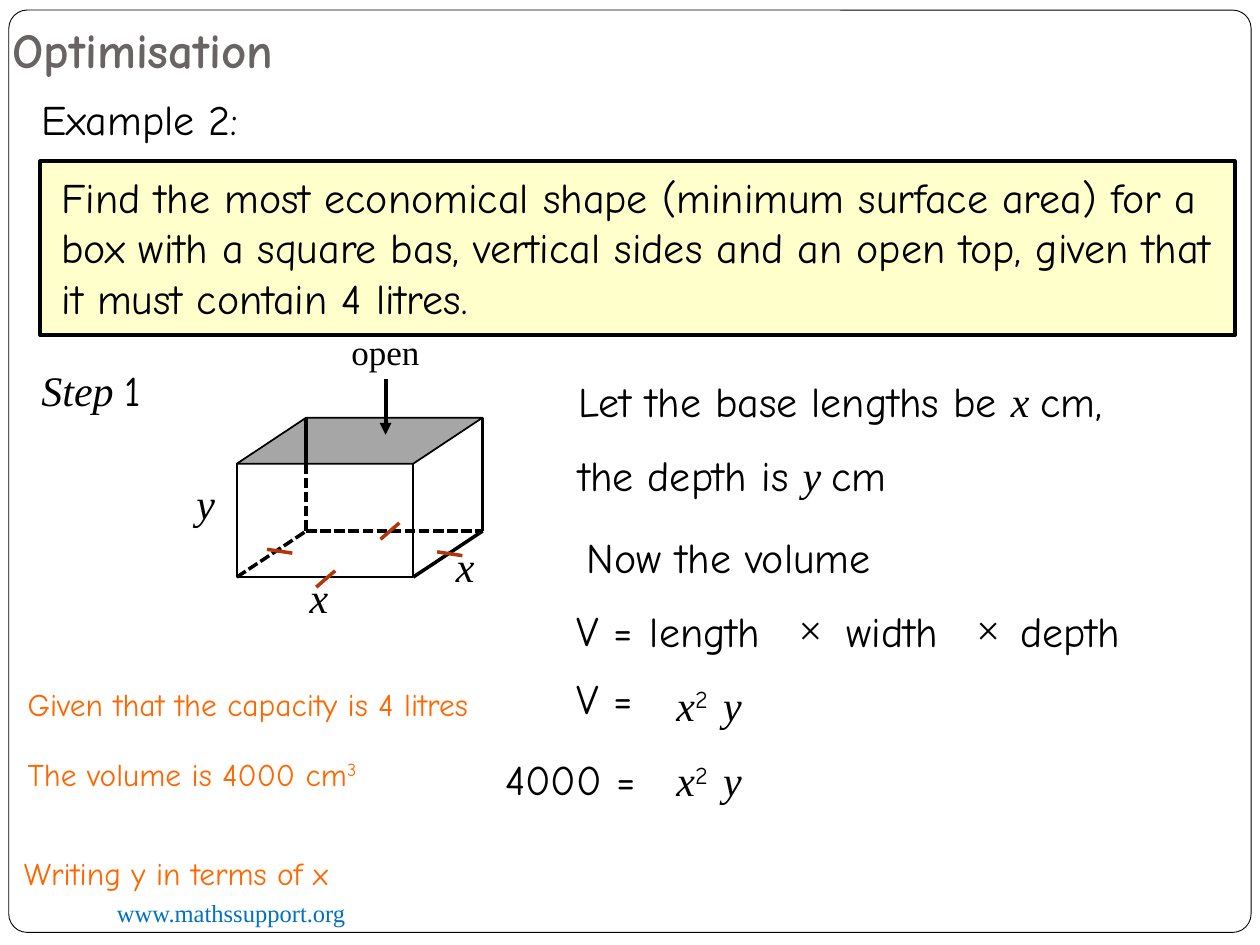
from dataclasses import dataclass

from lxml import etree
from pptx import Presentation
from pptx.dml.color import RGBColor
from pptx.enum.dml import MSO_LINE
from pptx.enum.shapes import MSO_CONNECTOR, MSO_SHAPE
from pptx.enum.text import MSO_ANCHOR, MSO_AUTO_SIZE, PP_ALIGN
from pptx.oxml.ns import qn
from pptx.util import Inches, Pt

STRAIGHT = MSO_CONNECTOR.STRAIGHT
DASHED = MSO_LINE.SQUARE_DOT
RECTANGLE = MSO_SHAPE.RECTANGLE
ROUNDED = MSO_SHAPE.ROUNDED_RECTANGLE
PARALLELOGRAM = MSO_SHAPE.PARALLELOGRAM
FIT_SHAPE = MSO_AUTO_SIZE.SHAPE_TO_FIT_TEXT
NO_FIT = MSO_AUTO_SIZE.NONE
BOTTOM = MSO_ANCHOR.BOTTOM
LEFT = PP_ALIGN.LEFT
TITLE_ONLY = 5
COLUMNS, ROWS = 100, 75


@dataclass(frozen=True)
class Theme:
    hand: str = "Comic Neue"
    serif: str = "Times New Roman"
    ink: str = "000000"
    title: str = "696464"
    panel: str = "FFFFCC"
    lid: str = "A6A6A6"
    tick: str = "B1360B"
    remark: str = "FF6600"
    link: str = "0070C0"
    title_size: int = 28
    body_size: int = 24
    label_size: int = 20
    remark_size: int = 18
    footer_size: int = 14


THEME = Theme()


def math(text):
    return text, "math"


def power(text):
    return text, "power"


class SlideBuilder:
    """Places elements on a grid of 100 columns by 75 rows."""

    def __init__(self, deck, theme):
        self.theme = theme
        self.column = deck.slide_width / COLUMNS
        self.row = deck.slide_height / ROWS
        self.slide = deck.slides.add_slide(deck.slide_layouts[TITLE_ONLY])
        self.shapes = self.slide.shapes

    def place(self, x, y):
        return round(x * self.column), round(y * self.row)

    def add_runs(self, frame, parts, size, color, font=None):
        """Fill one paragraph; a part is plain text or (text, role)."""
        paragraph = frame.paragraphs[0]
        paragraph.alignment = LEFT
        for part in [parts] if isinstance(parts, str) else parts:
            text, role = (part, "plain") if isinstance(part, str) else part
            run = paragraph.add_run()
            run.text = text
            run.font.size = Pt(size)
            run.font.color.rgb = RGBColor.from_string(color)
            run.font.italic = role == "math"
            run.font.name = self.theme.serif if role == "math" else font or self.theme.hand
            if role == "power":
                run._r.get_or_add_rPr().set("baseline", "30000")

    def title(self, text, x, y, width, height):
        holder = self.shapes.title
        holder.left, holder.top = self.place(x, y)
        holder.width, holder.height = self.place(width, height)
        frame = holder.text_frame
        frame.auto_size = NO_FIT
        frame.vertical_anchor = BOTTOM
        frame.margin_bottom = Inches(0.1)
        self.add_runs(frame, text, self.theme.title_size, self.theme.title)
        frame.paragraphs[0].runs[0].font.bold = True

    def text(self, parts, x, y, width, height=5, size=None, color=None, font=None, wrap=True):
        box = self.shapes.add_textbox(*self.place(x, y), *self.place(width, height))
        frame = box.text_frame
        frame.word_wrap = wrap
        frame.auto_size = FIT_SHAPE
        self.add_runs(frame, parts, size or self.theme.body_size, color or self.theme.ink, font)
        return box

    def remark(self, parts, x, y):
        self.text(parts, x, y, 44.8, 4, self.theme.remark_size, self.theme.remark)

    def shape(self, kind, x, y, width, height, fill=None, weight=1, adjust=None):
        shape = self.shapes.add_shape(kind, *self.place(x, y), *self.place(width, height))
        shape.shadow.inherit = False
        if fill:
            shape.fill.solid()
            shape.fill.fore_color.rgb = RGBColor.from_string(fill)
        else:
            shape.fill.background()
        shape.line.color.rgb = RGBColor.from_string(self.theme.ink)
        shape.line.width = Pt(weight)
        if adjust is not None:
            shape.adjustments[0] = adjust

    def line(self, start, end, color=None, weight=2, dash=None, arrow=False):
        line = self.shapes.add_connector(STRAIGHT, *self.place(*start), *self.place(*end))
        line.line.color.rgb = RGBColor.from_string(color or self.theme.ink)
        line.line.width = Pt(weight)
        if dash:
            line.line.dash_style = dash
        properties = line._element.spPr
        if arrow:
            etree.SubElement(properties.get_or_add_ln(), qn("a:tailEnd"), type="triangle")
        etree.SubElement(properties, qn("a:effectLst"))


def draw_problem(page):
    page.shape(RECTANGLE, 3.2, 12.8, 94.8, 13.8, THEME.panel, 2.25)
    statement = page.text(
        "Find the most economical shape (minimum surface area) for a box with a "
        "square bas, vertical sides and an open top, given that it must contain 4 litres.",
        3.9, 13.1, 93.3, 13.1)
    statement.fill.solid()
    statement.fill.fore_color.rgb = RGBColor.from_string(THEME.panel)


def draw_open_box(page):
    """Draw the square-based box in oblique projection."""
    left, top, width, height = 18.8, 36.8, 14, 9
    shift, rise = 5.5, 3.65
    right, base = left + width, top + height
    back_left, back_right = left + shift, right + shift
    back_top, back_base = top - rise, base - rise

    page.shape(PARALLELOGRAM, left, back_top, width + shift, rise, THEME.lid,
               adjust=shift / rise)
    page.shape(RECTANGLE, left, top, width, height)
    page.line((left, base), (back_left, back_base), dash=DASHED)
    page.line((right, base), (back_right, back_base))
    page.line((back_left, back_base), (back_right, back_base), dash=DASHED)
    page.line((back_right, back_top), (back_right, back_base))
    page.line((back_left, back_top), (back_left, top))
    page.line((back_left, top), (back_left, back_base), dash=DASHED)

    for x, y in ((25.1, 46.6), (30.2, 42.8)):
        page.line((x, y), (x + 1.5, y - 1.3), THEME.tick)
    for x, y in ((34.7, 43.8), (21.2, 43.6)):
        page.line((x, y), (x + 2, y + 0.3), THEME.tick)
    page.line((30.6, 30.1), (30.6, 34.5), weight=2.25, arrow=True)

    page.text("open", 26.9, 25.7, 7.5, 4.4, THEME.label_size, font=THEME.serif, wrap=False)
    for name, x, y in (("x", 23.6, 44.9), ("x", 35.2, 42.4), ("y", 14.6, 37.4)):
        page.text([math(name)], x, y, 3.5, wrap=False)


def draw_working(page):
    page.text([math("Step "), "1"], 2.3, 28.4, 10.2, wrap=False)
    page.text(["Let the base lengths be ", math("x "), "cm,"], 44.9, 29.3, 53)
    page.text(["the depth is ", math("y "), "cm"], 44.9, 35.2, 32.2)
    page.text("Now the volume", 45.6, 41.7, 31)

    for side, x in (("length", 50.6), ("width", 66.2), ("depth", 80)):
        page.text(side, x, 47.6, 12.8)
    for x in (62.4, 76.5):
        page.text("×", x, 47.4, 3.9, font=THEME.serif, wrap=False)
    for subject, x, y, width in (("V =", 44.8, 47.5, 8.2), ("V =", 44.8, 52.9, 8.2),
                                 ("4000 =", 39.1, 59.3, 13.1)):
        page.text(subject, x, y, width)
    for y in (53.4, 59.4):
        page.text([math("x"), power("2")], 52.7, y, 5.2)
        page.text([math("y")], 56.4, y, 5.2)

    page.remark("Given that the capacity is 4 litres", 1.2, 53.9)
    page.remark(["The volume is 4000 cm", power("3")], 1.2, 59.4)
    page.remark("Writing y in terms of x", 0.9, 67.3)


def main():
    deck = Presentation()
    deck.slide_width, deck.slide_height = Inches(10), Inches(7.5)
    page = SlideBuilder(deck, THEME)
    page.shape(ROUNDED, 0.7, 0.8, 98.6, 73.2, weight=0.5, adjust=0.02)
    page.text("www.mathssupport.org", 8.3, 70.8, 32.5, 3.4,
              THEME.footer_size, THEME.link, THEME.serif)
    page.title("Optimisation", 0, 0.5, 85, 6.7)
    page.text("Example 2:", 2.3, 6.9, 58.2)
    draw_problem(page)
    draw_open_box(page)
    draw_working(page)
    deck.save("out.pptx")


if __name__ == "__main__":
    main()
